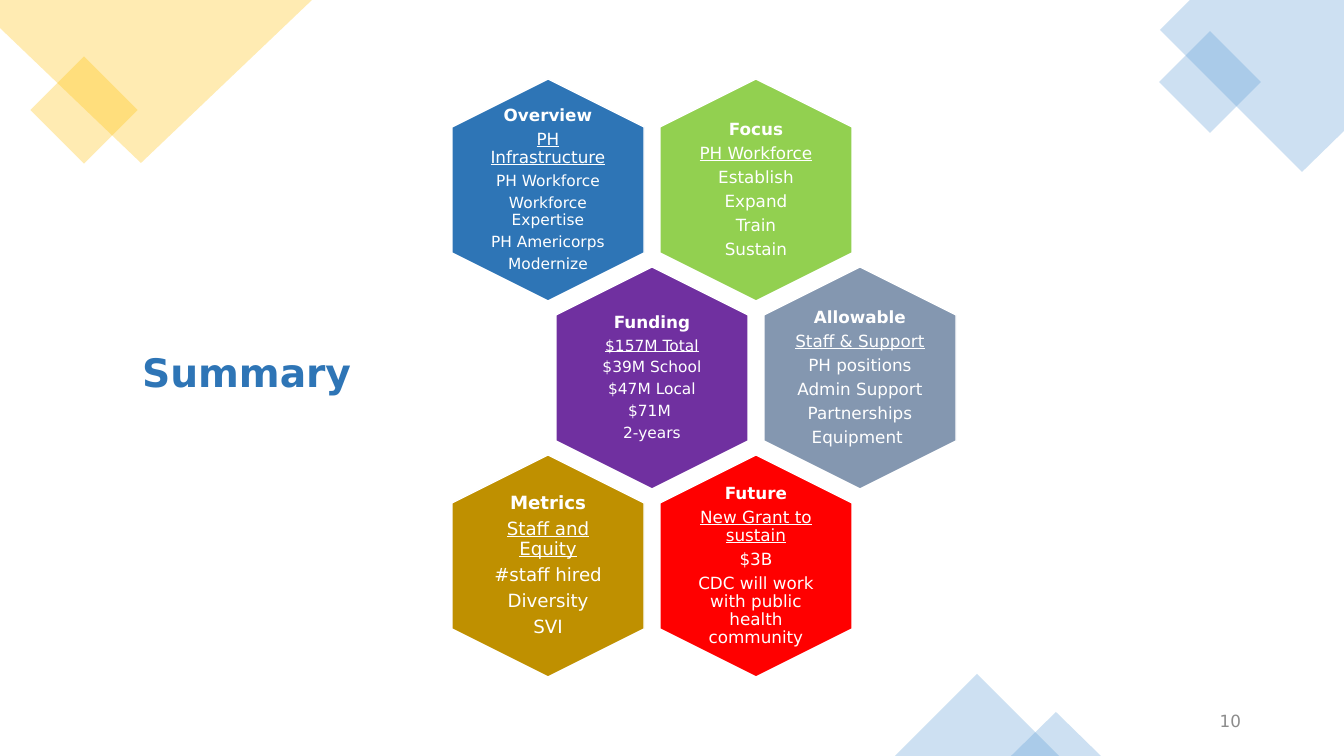
from pptx import Presentation
from pptx.dml.color import RGBColor
from pptx.enum.shapes import MSO_SHAPE
from pptx.enum.text import MSO_ANCHOR, MSO_AUTO_SIZE, PP_ALIGN
from pptx.oxml.ns import qn
from pptx.util import Pt
from lxml.etree import SubElement

SCALE = 914400 / 100.8
FONT = "DejaVu Sans"
WHITE = RGBColor(0xFF, 0xFF, 0xFF)
GOLD = RGBColor(0xFF, 0xC0, 0x00)
SKY = RGBColor(0x5B, 0x9B, 0xD5)
BLUE = RGBColor(0x2E, 0x75, 0xB6)
GREEN = RGBColor(0x92, 0xD0, 0x50)
PURPLE = RGBColor(0x70, 0x30, 0xA0)
SLATE = RGBColor(0x84, 0x97, 0xB0)
OCHRE = RGBColor(0xBF, 0x90, 0x00)
RED = RGBColor(0xFF, 0x00, 0x00)
GRAY = RGBColor(0x8C, 0x8C, 0x8C)

HEX_W, HEX_H = 222, 192
TEXT_W, TEXT_H = 133, 152
STEP_X, STEP_Y = 208, 188

CELLS = [
    (0, 0, BLUE, 0, 12, 12, 11,
     ["Overview", "PH Infrastructure", "PH Workforce", "Workforce Expertise",
      "PH Americorps", "Modernize"]),
    (1, 0, GREEN, 5, 12, 12, 12,
     ["Focus", "PH Workforce", "Establish", "Expand", "Train", "Sustain"]),
    (0.5, 1, PURPLE, 5, 12, 11, 11,
     ["Funding", "$157M Total", "$39M School", "$47M Local", "$71M ", "2-years"]),
    (1.5, 1, SLATE, 0, 12, 12, 12,
     ["Allowable", "Staff & Support", "PH positions", "Admin Support",
      "Partnerships", "Equipment "]),
    (0, 2, OCHRE, 0, 13, 13, 13,
     ["Metrics", "Staff and Equity", "#staff hired", "Diversity", "SVI"]),
    (1, 2, RED, 5, 12, 12, 12,
     ["Future", "New Grant to sustain", "$3B",
      "CDC will work with public health community"]),
]


def px(*nums):
    return [round(n * SCALE) for n in nums]


def write(para, text, size=12, color=WHITE, bold=False, under=False,
          align=PP_ALIGN.CENTER, space=None, after=0):
    para.alignment = align
    para.line_spacing = space
    para.space_before = Pt(0)
    para.space_after = Pt(after)
    run = para.add_run()
    run.text = text
    font = run.font
    font.name, font.size = FONT, Pt(size)
    font.bold, font.underline = bold, under
    font.color.rgb = color


def frame(shape, anchor, wrap=True, pad=None):
    body = shape.text_frame
    body.auto_size = MSO_AUTO_SIZE.NONE
    body.word_wrap = wrap
    body.vertical_anchor = anchor
    if pad is not None:
        gap, = px(pad)
        body.margin_left = body.margin_right = gap
        body.margin_top = body.margin_bottom = gap
    return body


def paint(shape, color, alpha=None):
    shape.shadow.inherit = False
    shape.fill.solid()
    shape.fill.fore_color.rgb = color
    shape.line.fill.background()
    if alpha:
        tone = shape.fill._xPr.find(qn("a:solidFill"))[0]
        SubElement(tone, qn("a:alpha"), val=str(alpha * 1000))


def block(slide, kind, box, color, turn=0):
    shape = slide.shapes.add_shape(kind, *px(*box))
    shape.rotation = turn
    paint(shape, color, 30)


def outline(slide, left, top, points, color):
    spots = [(left + x, top + y) for x, y in points]
    build = slide.shapes.build_freeform(*spots[0], scale=SCALE)
    build.add_line_segments(spots[1:], close=True)
    paint(build.convert_to_shape(), color, 30)


def corner_gold(slide, left, top):
    block(slide, MSO_SHAPE.RECTANGLE, (left + 46, top + 72, 76, 76), GOLD, 45)
    outline(slide, left, top, [(0, 0), (312, 0), (141, 163), (0, 28)], GOLD)


def corner_blue(slide, left, top):
    points = [(30, 0), (184, 0), (184, 131), (142, 172), (0, 30)]
    outline(slide, left, top, points, SKY)
    block(slide, MSO_SHAPE.RECTANGLE, (left + 14, top + 46, 72, 72), SKY, 45)


def peaks(slide, left, top):
    tri = MSO_SHAPE.ISOSCELES_TRIANGLE
    block(slide, tri, (left, top, 164, 82), SKY)
    block(slide, tri, (left + 116, top + 38, 90, 44), SKY)


def cell(slide, mid_x, mid_y, color, pad, sizes, lines):
    box = px(mid_x - HEX_W / 2, mid_y - HEX_H / 2, HEX_W, HEX_H)
    shape = slide.shapes.add_shape(MSO_SHAPE.HEXAGON, *box)
    shape.adjustments[0] = 0.25
    shape.rotation = 90
    paint(shape, color)
    shape.line.color.rgb = WHITE
    shape.line.width = Pt(1)
    box = px(mid_x - TEXT_W / 2, mid_y - TEXT_H / 2, TEXT_W, TEXT_H)
    body = frame(slide.shapes.add_textbox(*box), MSO_ANCHOR.MIDDLE, pad=pad)
    for i, text in enumerate(lines):
        para = body.add_paragraph() if i else body.paragraphs[0]
        size = sizes[min(i, 2)]
        write(para, text, size=size, bold=i == 0, under=i == 1,
              space=0.9, after=0.35 * size)


def comb(slide, left, top):
    for col, row, color, pad, head, sub, rest, lines in CELLS:
        cell(slide, left + HEX_H / 2 + col * STEP_X,
             top + HEX_W / 2 + row * STEP_Y, color, pad,
             (head, sub, rest), lines)


def heading(slide, *box):
    title = slide.shapes.title
    title.left, title.top, title.width, title.height = px(*box)
    body = frame(title, MSO_ANCHOR.TOP, wrap=False)
    write(body.paragraphs[0], "Summary", size=28, color=BLUE, bold=True,
          align=PP_ALIGN.LEFT, after=6)


def number(slide, *box):
    body = frame(slide.shapes.add_textbox(*px(*box)), MSO_ANCHOR.MIDDLE)
    write(body.paragraphs[0], "10", color=GRAY, align=PP_ALIGN.RIGHT)


def main():
    deck = Presentation()
    deck.slide_width, deck.slide_height = px(1344, 756)
    slide = deck.slides.add_slide(deck.slide_layouts[5])
    corner_gold(slide, 0, 0)
    corner_blue(slide, 1160, 0)
    peaks(slide, 895, 674)
    comb(slide, 452, 79)
    heading(slide, 132, 343, 233, 57)
    number(slide, 949, 701, 302, 40)
    deck.save("out.pptx")


if __name__ == "__main__":
    main()
